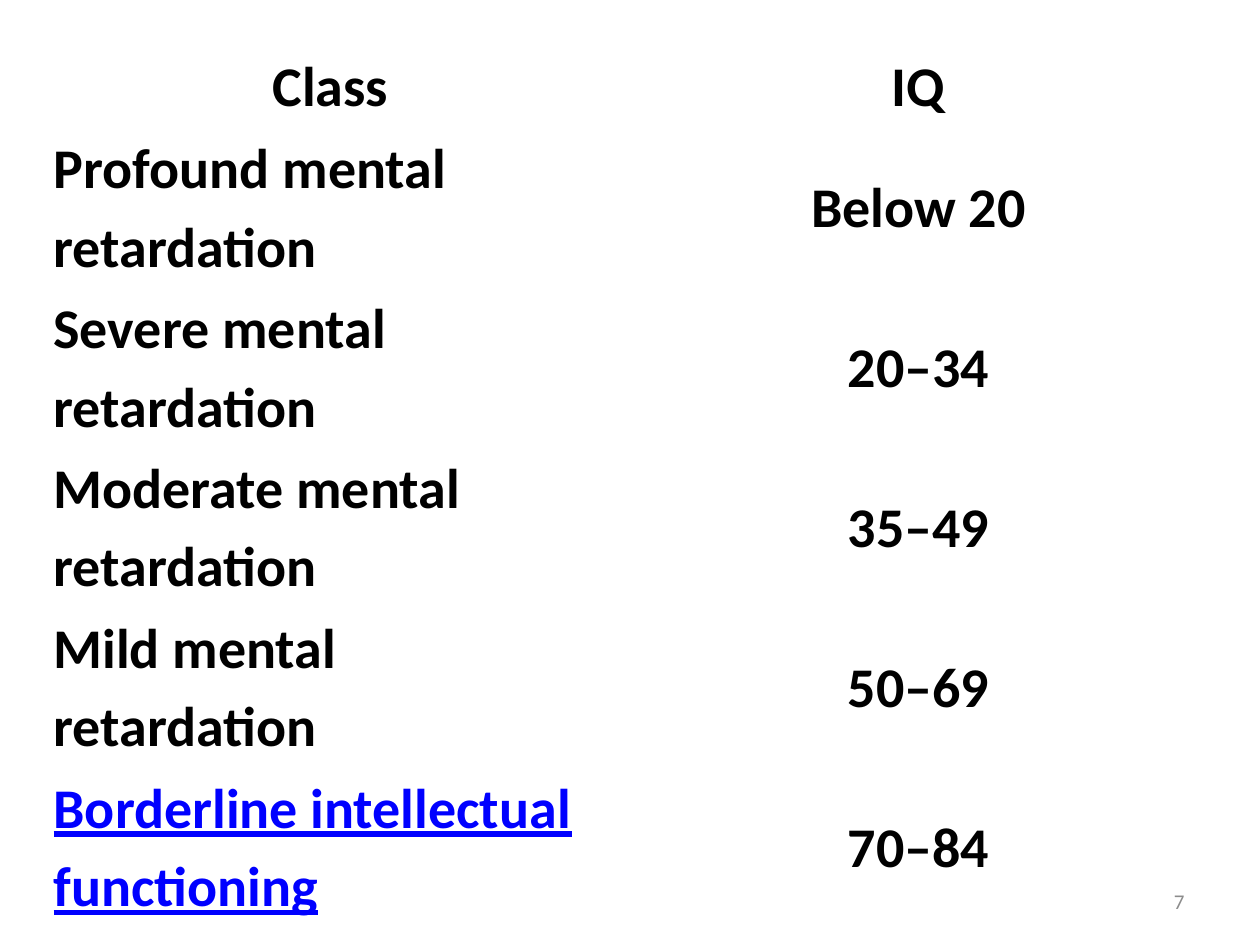
from pptx import Presentation
from pptx.dml.color import RGBColor
from pptx.enum.text import MSO_ANCHOR, PP_ALIGN
from pptx.util import Inches, Pt

MIDDLE = MSO_ANCHOR.MIDDLE
LEFT, CENTER, RIGHT = PP_ALIGN.LEFT, PP_ALIGN.CENTER, PP_ALIGN.RIGHT
BLACK = RGBColor(0x00, 0x00, 0x00)
LINK_BLUE = RGBColor(0x00, 0x00, 0xFF)
GRAY = RGBColor(0x8C, 0x8C, 0x8C)
FONT = "Calibri"

IQ_CLASSES = [
    ("Class", "IQ"),
    ("Profound mental retardation", "Below 20"),
    ("Severe mental retardation", "20–34"),
    ("Moderate mental retardation", "35–49"),
    ("Mild mental retardation", "50–69"),
    ("Borderline intellectual functioning", "70–84"),
]

deck = Presentation()
deck.slide_width, deck.slide_height = Inches(10), Inches(7.5)
page = deck.slides.add_slide(deck.slide_layouts[6])

number_box = page.shapes.add_textbox(Inches(7.17), Inches(6.95), Inches(2.33), Inches(0.4))
number_frame = number_box.text_frame
number_frame.word_wrap = True
number_frame.vertical_anchor = MIDDLE
para = number_frame.paragraphs[0]
para.text = "7"
para.alignment = RIGHT
para.font.name, para.font.size = FONT, Pt(12)
para.font.color.rgb = GRAY

table = page.shapes.add_table(
    len(IQ_CLASSES), 2, Inches(0.415), Inches(0.33), Inches(9.33), Inches(7)
).table
table.first_row = table.horz_banding = False
table.columns[0].width = Inches(4.415)
table.columns[1].width = Inches(4.92)

for row, texts in enumerate(IQ_CLASSES):
    table.rows[row].height = Inches(0.65 if row == 0 else 1.27)
    for column, text in enumerate(texts):
        cell = table.cell(row, column)
        cell.fill.background()
        cell.vertical_anchor = MIDDLE
        cell.margin_left = cell.margin_right = Inches(0.01)
        cell.margin_top = cell.margin_bottom = Inches(0.01)
        para = cell.text_frame.paragraphs[0]
        para.text = text
        para.alignment = LEFT if row > 0 and column == 0 else CENTER
        para.line_spacing = 1.15
        para.space_after = Pt(10)
        is_link = text.startswith("Borderline")
        para.font.name, para.font.size = FONT, Pt(32)
        para.font.bold = True
        para.font.underline = is_link
        para.font.color.rgb = LINK_BLUE if is_link else BLACK

deck.save("out.pptx")
